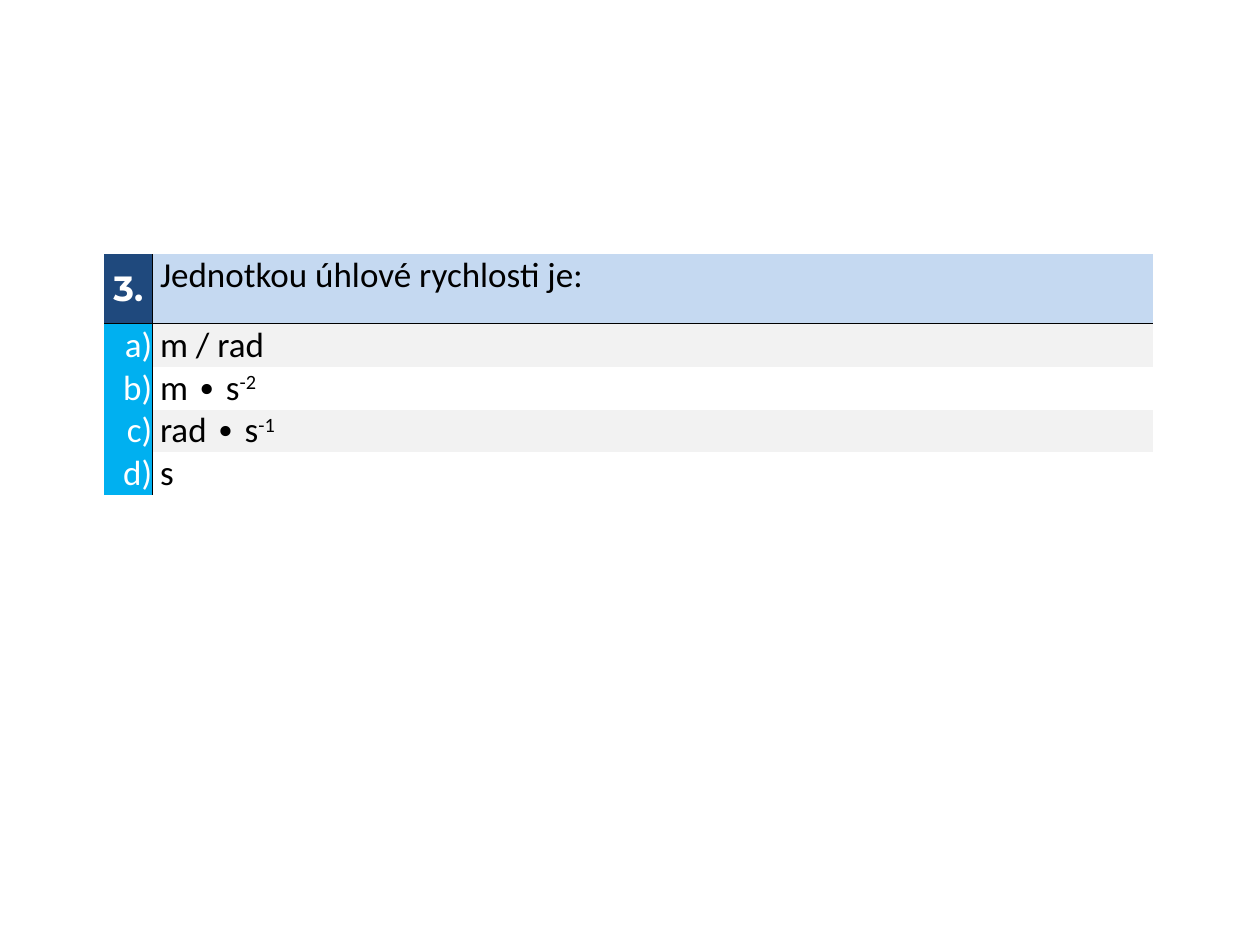
from dataclasses import dataclass

from lxml.etree import SubElement
from pptx import Presentation
from pptx.dml.color import RGBColor
from pptx.enum.text import MSO_ANCHOR, PP_ALIGN
from pptx.oxml.ns import qn
from pptx.util import Pt


@dataclass(frozen=True)
class Theme:
    navy: str = "1F497D"
    pale_blue: str = "C5D9F1"
    sky: str = "00B0F0"
    band: str = "F2F2F2"
    white: str = "FFFFFF"
    black: str = "000000"
    heading_font: str = "Montserrat"
    body_font: str = "Calibri"
    size: float = 20
    rule: float = 0.5


THEME = Theme()
QUESTION = ("3.", "Jednotkou úhlové rychlosti je:")
# Label, unit and exponent of each answer
ANSWERS = [
    ("a)", "m / rad", ""),
    ("b)", "m ∙ s", "-2"),
    ("c)", "rad ∙ s", "-1"),
    ("d)", "s", ""),
]
LABEL_WIDTH = 27.36
HEADER_HEIGHT = 39.6
TEXT_INDENT = 4.5


def set_borders(cell, ruled):
    """Rule the sides named in ruled (L, R, T, B) and clear the others."""
    properties = cell._tc.get_or_add_tcPr()
    for index, side in enumerate("LRTB"):
        line = SubElement(properties, qn(f"a:ln{side}"))
        properties.insert(index, line)
        if side in ruled:
            line.set("w", str(Pt(THEME.rule)))
            fill = SubElement(line, qn("a:solidFill"))
            SubElement(fill, qn("a:srgbClr")).set("val", THEME.black)
        else:
            line.set("w", "0")
            SubElement(line, qn("a:noFill"))


def fill_cell(cell, text, fill, color, anchor, ruled, align=PP_ALIGN.LEFT,
              font=THEME.body_font, bold=False, exponent="", indent=0):
    cell.margin_left = Pt(indent)
    cell.margin_right = cell.margin_top = cell.margin_bottom = Pt(0)
    cell.vertical_anchor = anchor
    if fill:
        cell.fill.solid()
        cell.fill.fore_color.rgb = RGBColor.from_string(fill)
    else:
        cell.fill.background()
    set_borders(cell, ruled)

    para = cell.text_frame.paragraphs[0]
    para.alignment = align
    para.add_run().text = text
    if exponent:
        span = para.add_run()
        span.text = exponent
        span._r.get_or_add_rPr().set("baseline", "30000")
    para.font.name = font
    para.font.size = Pt(THEME.size)
    para.font.bold = bold
    para.font.color.rgb = RGBColor.from_string(color)


def add_question_table(page, left, top, width, height):
    table = page.shapes.add_table(
        len(ANSWERS) + 1, 2, Pt(left), Pt(top), Pt(width), Pt(height)).table
    table.first_row = table.horz_banding = False
    table.columns[0].width = Pt(LABEL_WIDTH)
    table.columns[1].width = Pt(width - LABEL_WIDTH)
    answer_height = (height - HEADER_HEIGHT) / len(ANSWERS)
    for index, row in enumerate(table.rows):
        row.height = Pt(answer_height if index else HEADER_HEIGHT)

    # Question
    number, question = QUESTION
    fill_cell(table.cell(0, 0), number, THEME.navy, THEME.white,
              MSO_ANCHOR.MIDDLE, "RB", PP_ALIGN.CENTER,
              THEME.heading_font, bold=True)
    fill_cell(table.cell(0, 1), question, THEME.pale_blue, THEME.black,
              MSO_ANCHOR.TOP, "LB", indent=TEXT_INDENT)

    # Answers, every other one shaded
    for row, (label, unit, exponent) in enumerate(ANSWERS, start=1):
        top_rule = "T" if row == 1 else ""
        fill_cell(table.cell(row, 0), label, THEME.sky, THEME.white,
                  MSO_ANCHOR.MIDDLE, "R" + top_rule, PP_ALIGN.RIGHT)
        fill_cell(table.cell(row, 1), unit, THEME.band if row % 2 else None,
                  THEME.black, MSO_ANCHOR.BOTTOM, "L" + top_rule,
                  exponent=exponent, indent=TEXT_INDENT)


def main():
    deck = Presentation()
    deck.slide_width, deck.slide_height = Pt(720), Pt(540)
    page = deck.slides.add_slide(deck.slide_layouts[6])
    add_question_table(page, 59.6, 145.4, 599, 137.2)
    deck.save("out.pptx")


if __name__ == "__main__":
    main()
